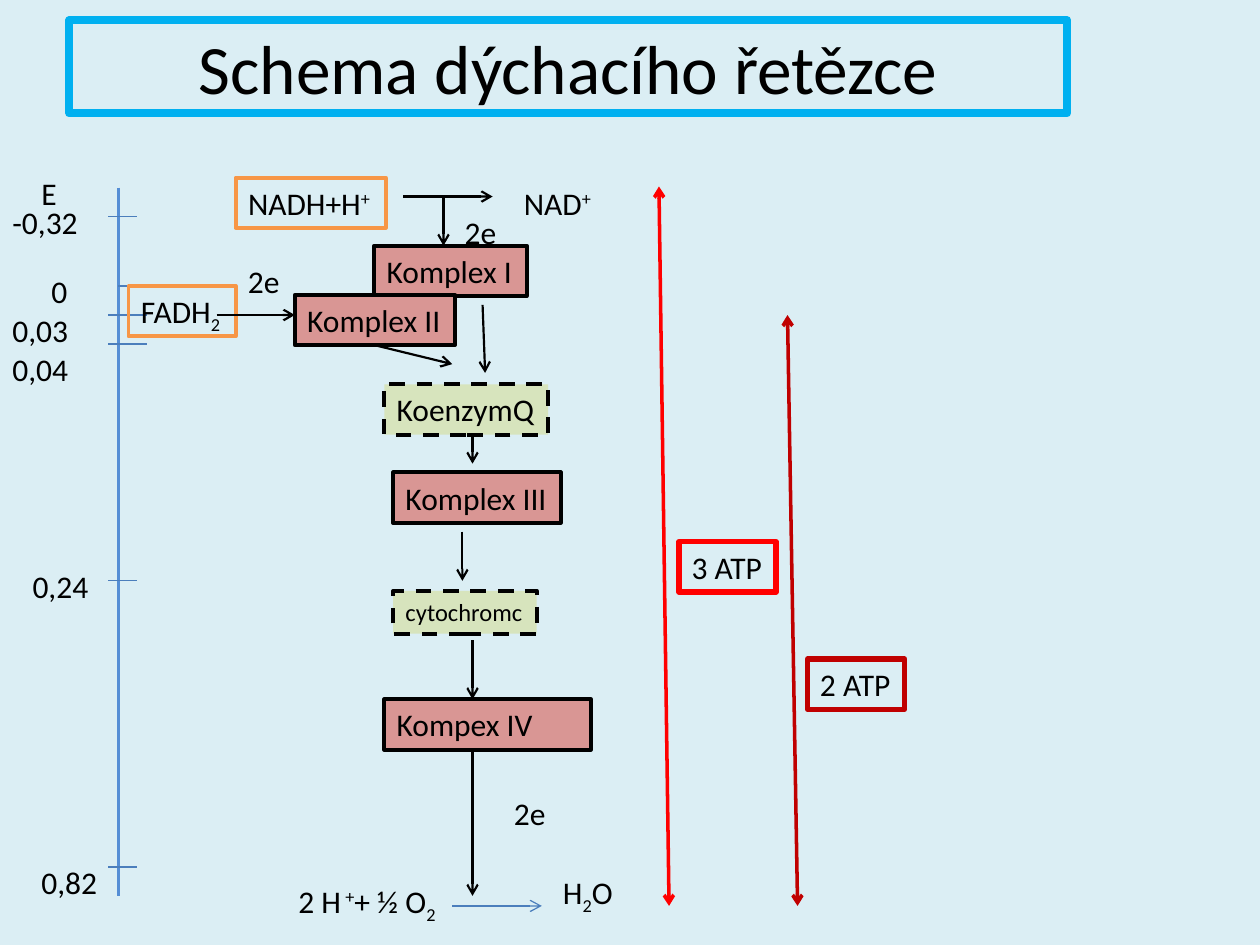
from dataclasses import dataclass
from typing import Optional, Union

from lxml.etree import SubElement
from pptx import Presentation
from pptx.dml.color import RGBColor
from pptx.enum.dml import MSO_LINE
from pptx.enum.shapes import MSO_CONNECTOR
from pptx.enum.text import MSO_ANCHOR, MSO_AUTO_SIZE, PP_ALIGN
from pptx.oxml.ns import qn
from pptx.util import Inches, Pt

BACKGROUND = RGBColor(0xDB, 0xEE, 0xF4)
BLACK = RGBColor(0x00, 0x00, 0x00)
TITLE_BLUE = RGBColor(0x00, 0xB0, 0xF0)
AXIS_BLUE = RGBColor(0x55, 0x8E, 0xD5)
THIN_BLUE = RGBColor(0x4B, 0x7E, 0xBC)
ORANGE = RGBColor(0xF7, 0x96, 0x46)
PINK = RGBColor(0xD9, 0x96, 0x94)
GREEN = RGBColor(0xD7, 0xE4, 0xBD)
RED = RGBColor(0xFF, 0x00, 0x00)
DARK_RED = RGBColor(0xC0, 0x00, 0x00)

FONT = "Calibri"
SUP, SUB = 30000, -25000
Runs = tuple[tuple[str, int], ...]


@dataclass
class Label:
    text: Union[str, Runs]
    left: float
    top: float
    width: float
    height: float = 0.4
    size: int = 18
    fill: Optional[RGBColor] = None
    line: Optional[RGBColor] = None
    weight: float = 2.25
    dashed: bool = False
    wrap: bool = False


@dataclass
class Line:
    x1: float
    y1: float
    x2: float
    y2: float
    color: RGBColor = BLACK
    weight: float = 1.25
    head: bool = False
    tail: bool = True


def add_label(slide, label: Label):
    s = slide.shapes.add_textbox(Inches(label.left), Inches(label.top),
                                 Inches(label.width), Inches(label.height))
    if label.fill is not None:
        s.fill.solid()
        s.fill.fore_color.rgb = label.fill
    if label.line is not None:
        s.line.color.rgb = label.line
        s.line.width = Pt(label.weight)
        if label.dashed:
            s.line.dash_style = MSO_LINE.DASH
    tf = s.text_frame
    tf.word_wrap = label.wrap
    tf.auto_size = MSO_AUTO_SIZE.SHAPE_TO_FIT_TEXT
    p = tf.paragraphs[0]
    p.font.name = FONT
    p.font.size = Pt(label.size)
    p.font.color.rgb = BLACK
    runs = ((label.text, 0),) if isinstance(label.text, str) else label.text
    for text, baseline in runs:
        r = p.add_run()
        r.text = text
        if baseline:
            r._r.get_or_add_rPr().set("baseline", str(baseline))
    return s


def add_line(slide, line: Line):
    c = slide.shapes.add_connector(MSO_CONNECTOR.STRAIGHT,
                                   Inches(line.x1), Inches(line.y1),
                                   Inches(line.x2), Inches(line.y2))
    c.line.color.rgb = line.color
    c.line.width = Pt(line.weight)
    ln = c.line._get_or_add_ln()
    for tag, shown in (("a:headEnd", line.head), ("a:tailEnd", line.tail)):
        if shown:
            SubElement(ln, qn(tag)).set("type", "arrow")
    SubElement(c._element.spPr, qn("a:effectLst"))
    return c


AXIS_X = 0.94
# Height on the axis, left end, right end
TICKS = [(1.72, 0.86, 1.09), (2.27, AXIS_X, 1.09), (2.5, 0.86, 1.17),
         (2.73, 0.86, 1.17), (4.61, 0.86, 1.09), (6.88, 0.86, 1.09)]

POTENTIALS = [
    Label("E", 0.23, 1.33, 0.32),
    Label("-0,32", 0, 1.56, 0.73),
    Label("0", 0.31, 2.11, 0.33),
    Label("0,03", 0, 2.42, 0.65),
    Label("0,04", 0, 2.73, 0.65),
    Label("0,24", 0.16, 4.45, 0.65),
    Label("0,82", 0.23, 6.8, 0.65),
]

SUBSTANCES = [
    Label((("NADH+H", 0), ("+", SUP)), 1.87, 1.41, 1.19, line=ORANGE),
    Label((("NAD", 0), ("+", SUP)), 4.06, 1.41, 0.75),
    Label((("FADH", 0), ("2", SUB)), 1.02, 2.27, 0.85, line=ORANGE),
    Label((("2 H", 0), (" +", SUP), ("+ ½ O", 0), ("2", SUB)),
          2.27, 6.95, 3.05, wrap=True),
    Label((("H", 0), ("2", SUB), ("O", 0)), 4.37, 6.88, 2.27, wrap=True),
]

ELECTRONS = [Label("2e", x, y, 0.46)
             for x, y in ((3.59, 1.64), (1.87, 2.03), (3.98, 6.25))]

COMPLEX_II = Label("Komplex II", 2.34, 2.34, 1.27, fill=PINK, line=BLACK)
CHAIN = [
    Label("Komplex III", 3.12, 3.75, 1.33, fill=PINK, line=BLACK),
    Label("Kompex IV", 3.05, 5.55, 1.64, fill=PINK, line=BLACK, wrap=True),
    Label("KoenzymQ", 3.05, 3.05, 1.3, fill=GREEN, line=BLACK, dashed=True),
    Label("cytochromc", 3.12, 4.69, 1.14, 0.34, 14, GREEN, BLACK, dashed=True),
]

YIELDS = [
    Label("3 ATP", 5.39, 4.3, 0.77, line=RED, weight=3),
    Label("2 ATP", 6.41, 5.23, 0.77, line=DARK_RED, weight=3),
]

ARROWS = [
    Line(3.2, 1.56, 3.91, 1.56),
    Line(3.52, 1.56, 3.52, 1.95),
    Line(1.72, 2.5, 2.34, 2.5),
    Line(3.83, 2.42, 3.85, 2.96),
    Line(3.75, 3.44, 3.75, 3.68),
    Line(3.67, 4.22, 3.67, 4.61),
    Line(3.75, 5.08, 3.75, 5.55),
    Line(3.75, 5.94, 3.75, 7.11),
    Line(3.59, 7.19, 4.3, 7.19, THIN_BLUE, 0.75),
    Line(5.23, 1.48, 5.31, 7.19, RED, 2, head=True),
    Line(6.25, 2.5, 6.33, 7.19, DARK_RED, 2, head=True),
]


def main() -> None:
    prs = Presentation()
    prs.slide_width, prs.slide_height = Inches(10), Inches(7.5)
    slide = prs.slides.add_slide(prs.slide_layouts[5])
    slide.background.fill.solid()
    slide.background.fill.fore_color.rgb = BACKGROUND

    # Title
    title = slide.shapes.title
    title.left, title.top = Inches(0.55), Inches(0.16)
    title.width, title.height = Inches(7.92), Inches(0.74)
    title.line.color.rgb = TITLE_BLUE
    title.line.width = Pt(4.5)
    tf = title.text_frame
    tf.text = "Schema dýchacího řetězce"
    tf.vertical_anchor = MSO_ANCHOR.MIDDLE
    tf.auto_size = MSO_AUTO_SIZE.NONE
    p = tf.paragraphs[0]
    p.alignment = PP_ALIGN.CENTER
    p.font.name = FONT
    p.font.size = Pt(39.6)
    p.font.color.rgb = BLACK

    # Axis of redox potential
    add_line(slide, Line(AXIS_X, 1.49, AXIS_X, 7.11, AXIS_BLUE, 1.75, tail=False))
    for y, left, right in TICKS:
        add_line(slide, Line(left, y, right, y, THIN_BLUE, 0.75, tail=False))

    # Labels and boxes; complex II overlaps complex I
    for label in POTENTIALS + SUBSTANCES + ELECTRONS:
        add_label(slide, label)
    add_label(slide, Label("Komplex I", 2.97, 1.95, 1.21, fill=PINK, line=BLACK))
    complex_ii = add_label(slide, COMPLEX_II)
    for label in CHAIN + YIELDS:
        add_label(slide, label)

    # Arrows
    for arrow in ARROWS:
        add_line(slide, arrow)
    to_coenzyme = add_line(slide, Line(2.98, 2.75, 3.59, 2.89))
    to_coenzyme.begin_connect(complex_ii, 2)

    prs.save("out.pptx")


if __name__ == "__main__":
    main()
